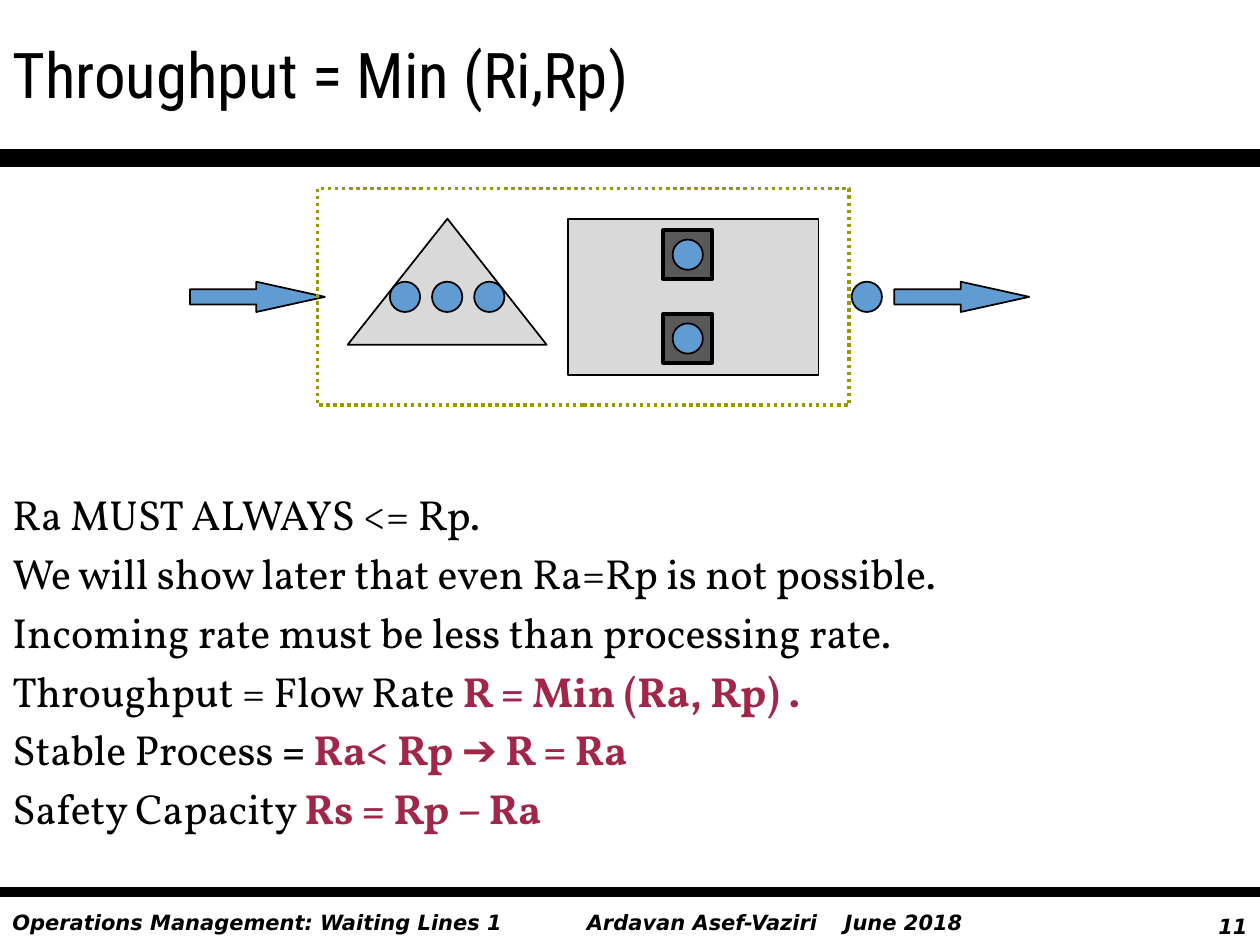
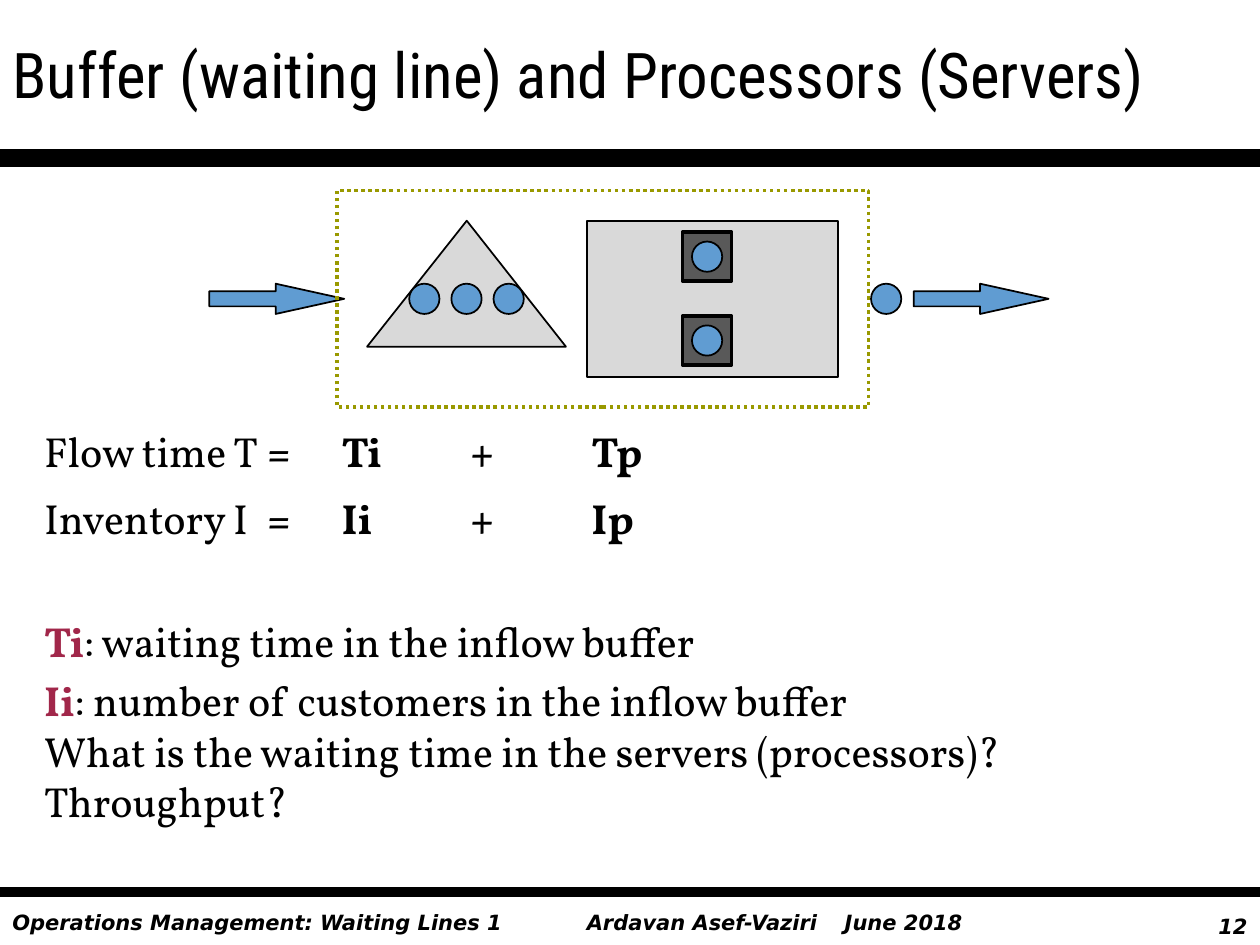
from lxml import etree
from pptx import Presentation
from pptx.dml.color import RGBColor
from pptx.enum.dml import MSO_LINE
from pptx.enum.shapes import MSO_CONNECTOR, MSO_SHAPE
from pptx.enum.text import MSO_ANCHOR, MSO_AUTO_SIZE, PP_ALIGN
from pptx.oxml.ns import qn
from pptx.util import Cm, Pt

# Shared style
BLACK, RED = "000000", "A1274A"
GREY, DARK, BLUE, OLIVE = "D9D9D9", "595959", "609CD2", "999900"
TITLE_FONT, BODY_FONT, FOOTER_FONT = "Roboto Condensed", "Vollkorn", "DejaVu Sans"
WIDTH, HEIGHT = 25.4, 19.05
GAP = 4.8  # points before a body paragraph


def rgb(value):
    return RGBColor.from_string(value)


def format_run(r, font, size, color=BLACK, bold=False, italic=False):
    r.font.name = font
    r.font.size = Pt(size)
    r.font.color.rgb = rgb(color)
    r.font.bold = bold
    r.font.italic = italic


def set_tabs(p, stops):
    tabs = etree.SubElement(p._p.get_or_add_pPr(), qn("a:tabLst"))
    for stop in stops:
        etree.SubElement(tabs, qn("a:tab"), pos=str(Cm(stop)), algn="l")


def add_text_frame(s, x, y, w, h):
    tf = s.shapes.add_textbox(Cm(x), Cm(y), Cm(w), Cm(h)).text_frame
    tf.word_wrap = True
    return tf


def add_title(s, text):
    title = s.shapes.title
    title.left, title.top = Cm(0), Cm(0)
    title.width, title.height = Cm(WIDTH), Cm(2.97)
    tf = title.text_frame
    tf.text = text
    tf.auto_size = MSO_AUTO_SIZE.NONE
    tf.vertical_anchor = MSO_ANCHOR.MIDDLE
    p = tf.paragraphs[0]
    p.alignment = PP_ALIGN.LEFT
    format_run(p.runs[0], TITLE_FONT, 36)


def add_band(s, y, weight):
    band = s.shapes.add_connector(MSO_CONNECTOR.STRAIGHT, Cm(0), Cm(y), Cm(WIDTH), Cm(y))
    band.line.color.rgb = rgb(BLACK)
    band.line.width = Pt(weight)
    etree.SubElement(band._element.spPr, qn("a:effectLst"))


def add_footer(s, text, x, y, w, align=PP_ALIGN.LEFT, stops=()):
    tf = add_text_frame(s, x, y, w, 0.76)
    tf.text = text
    p = tf.paragraphs[0]
    p.alignment = align
    if stops:
        set_tabs(p, stops)
    format_run(p.runs[0], FOOTER_FONT, 12, bold=True, italic=True)


def add_slide(prs, title, number):
    s = prs.slides.add_slide(prs.slide_layouts[5])
    add_band(s, 3.18, 10)
    add_band(s, 17.98, 6)
    add_footer(s, "Operations Management: Waiting Lines 1", 0, 18.21, 11.86)
    add_footer(s, "Ardavan Asef-Vaziri\tJune 2018", 11.58, 18.21, 8.5, stops=[5.2])
    add_footer(s, str(number), 23.5, 18.29, 1.9, PP_ALIGN.RIGHT)
    add_title(s, title)
    return s


def add_body(s, x, y, w, h, paragraphs):
    """Each paragraph is (space before, tab stops, [(text, colour, bold), ...])."""
    tf = add_text_frame(s, x, y, w, h)
    for i, (before, stops, runs) in enumerate(paragraphs):
        p = tf.add_paragraph() if i else tf.paragraphs[0]
        p.space_before = Pt(before)
        if stops:
            set_tabs(p, stops)
        for text, color, bold in runs:
            r = p.add_run()
            r.text = text
            format_run(r, BODY_FONT, 24, color, bold)


def style(sp, fill, line=BLACK, weight=1):
    sp.shadow.inherit = False
    if fill:
        sp.fill.solid()
        sp.fill.fore_color.rgb = rgb(fill)
    else:
        sp.fill.background()
    sp.line.color.rgb = rgb(line)
    sp.line.width = Pt(weight)


def add_process(s, left, top):
    """Buffer and servers inside a dotted frame whose corner is (left, top)."""
    shapes = s.shapes.add_group_shape().shapes
    row, size = 1.88, 0.61  # the flow line and the size of a customer

    def add(kind, x, y, w, h, fill, line=BLACK, weight=1):
        sp = shapes.add_shape(kind, Cm(left + x), Cm(top + y), Cm(w), Cm(h))
        style(sp, fill, line, weight)
        return sp

    def add_customer(x, y):
        add(MSO_SHAPE.OVAL, x, y, size, size, BLUE)

    def add_flow(x):
        arrow = add(MSO_SHAPE.RIGHT_ARROW, x, row, 2.72, size, BLUE)
        arrow.adjustments[0] = 0.5
        arrow.adjustments[1] = 2.265

    # Buffer with waiting customers
    corners = [(0.61, 3.15), (2.62, 0.61), (4.62, 3.15)]
    points = [(Cm(left + x), Cm(top + y)) for x, y in corners]
    outline = shapes.build_freeform(*points[0])
    outline.add_line_segments(points[1:], close=True)
    style(outline.convert_to_shape(), GREY)
    for i in range(3):
        add_customer(1.46 + 0.85 * i, row)

    # Two servers, each with a customer
    add(MSO_SHAPE.RECTANGLE, 5.05, 0.61, 5.05, 3.15, GREY)
    for i in range(2):
        y = 0.84 + 1.69 * i
        add(MSO_SHAPE.RECTANGLE, 6.97, y, 0.99, 0.99, DARK, weight=2)
        add_customer(7.16, y + 0.19)

    # Inflow, outflow and process boundary
    add_customer(10.77, row)
    add_flow(11.63)
    add_flow(-2.57)
    frame = add(MSO_SHAPE.RECTANGLE, 0, 0, 10.72, 4.37, None, OLIVE, 2)
    frame.line.dash_style = MSO_LINE.ROUND_DOT


def plain(text):
    return (text, BLACK, False)


def strong(text, color=BLACK):
    return (text, color, True)


def main():
    prs = Presentation()
    prs.slide_width, prs.slide_height = Cm(WIDTH), Cm(HEIGHT)

    # Throughput
    s = add_slide(prs, "Throughput = Min (Ri,Rp)", 11)
    add_process(s, 6.4, 3.8)
    lines = [
        [plain("Ra MUST ALWAYS <= Rp.")],
        [plain("We will show later that even Ra=Rp is not possible.")],
        [plain("Incoming rate must be less than processing rate.")],
        [plain("Throughput = Flow Rate "), strong("R = Min (Ra, Rp) .", RED)],
        [plain("Stable Process "), strong("= "), strong("Ra< Rp ➔ R = Ra", RED)],
        [plain("Safety Capacity "), strong("Rs = Rp – Ra", RED)],
    ]
    add_body(s, 0, 9.73, WIDTH, 7.62, [(GAP, (), runs) for runs in lines])

    # Buffer and processors
    s = add_slide(prs, "Buffer (waiting line) and Processors (Servers)", 12)
    add_process(s, 6.79, 3.84)
    stops = [4.5, 6.0, 8.6, 11.03]
    add_body(s, 0.64, 8.46, 24.76, 8.89, [
        (GAP, stops, [plain("Flow time T"), strong("\t=\tTi\t+\tTp")]),
        (9, stops, [plain("Inventory I"), strong("\t=\tIi\t+\tIp")]),
        (42, (), [strong("Ti", RED), plain(": waiting time in the inflow buffer")]),
        (GAP, (), [strong("Ii", RED), plain(": number of customers in the inflow buffer")]),
        (0, (), [plain("What is the waiting time in the servers (processors)?")]),
        (0, (), [plain("Throughput?")]),
    ])

    prs.save("out.pptx")


if __name__ == "__main__":
    main()
